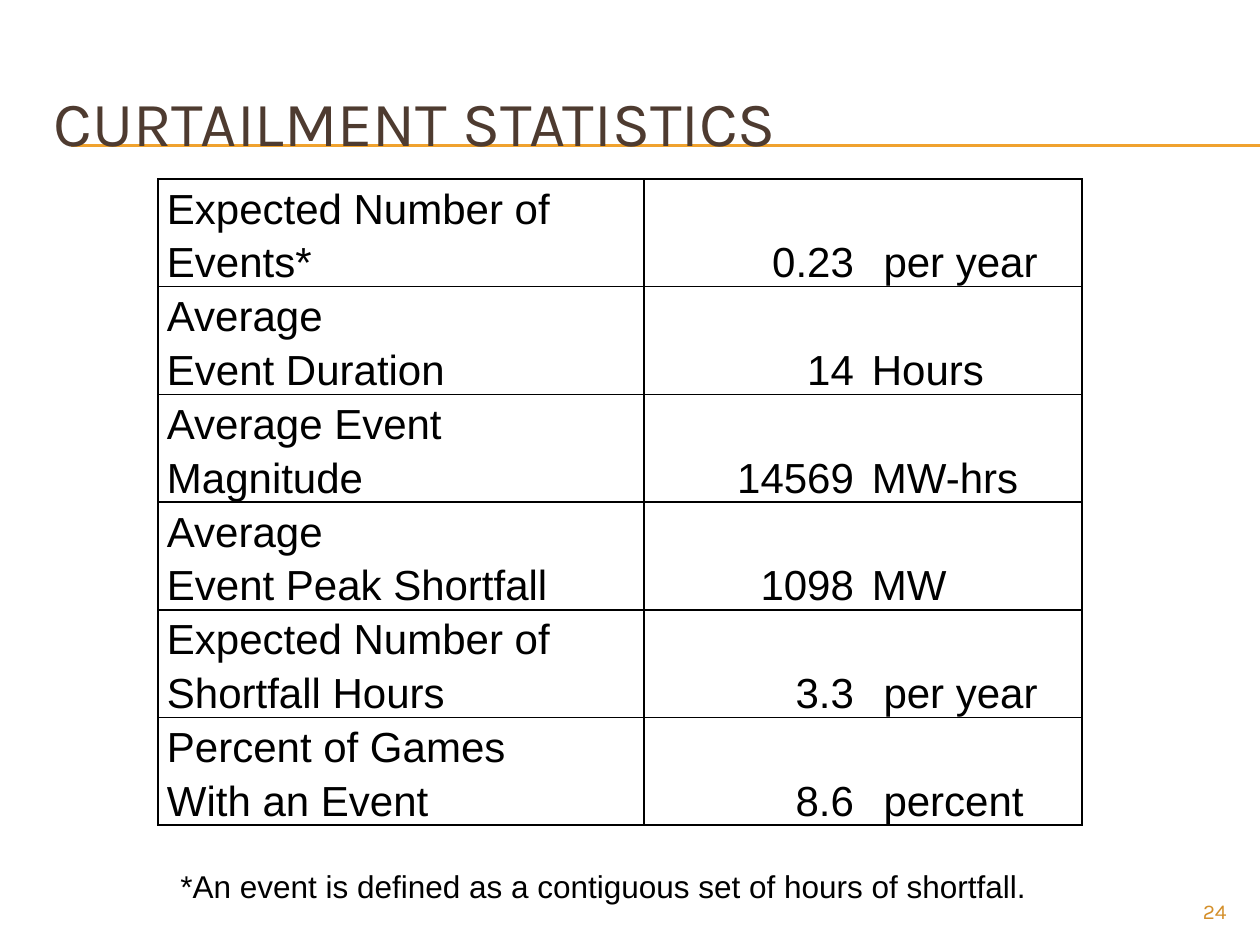
"""Build the curtailment statistics slide."""
from lxml.etree import SubElement
from pptx import Presentation
from pptx.dml.color import RGBColor
from pptx.enum.shapes import MSO_CONNECTOR
from pptx.enum.text import MSO_ANCHOR, PP_ALIGN
from pptx.oxml.ns import qn
from pptx.util import Pt

PX = 914400 // 126
COLORS = {"title": "4E3B30", "rule": "F0A22E", "number": "D48F29", "text": "000000", "cell": "FFFFFF"}
STYLES = {
    "title": {"size": Pt(36), "name": "Karla", "color": "title"},
    "number": {"size": Pt(12), "name": "Karla", "color": "number"},
    "table": {"size": Pt(24), "name": "Arial", "color": "text"},
    "note": {"size": Pt(18), "name": "Arial", "color": "text"},
}
ROWS = [
    (["Expected Number of Events*"], "0.23", " per year"),
    (["Average", "Event Duration"], "14", "Hours"),
    (["Average Event Magnitude"], "14569", "MW-hrs"),
    (["Average", "Event Peak Shortfall"], "1098", "MW"),
    (["Expected Number of", "Shortfall Hours"], "3.3", " per year"),
    (["Percent of Games", "With an Event"], "8.6", " percent"),
]


def write(tf, lines, style, align=PP_ALIGN.LEFT, spacing=None):
    tf.word_wrap = True
    for i, line in enumerate(lines):
        p = tf.add_paragraph() if i else tf.paragraphs[0]
        p.alignment = align
        p.line_spacing = spacing
        p.space_before = p.space_after = Pt(0)
        r = p.add_run()
        r.text = line
        for key, value in STYLES[style].items():
            if key == "color":
                r.font.color.rgb = RGBColor.from_string(COLORS[value])
            else:
                setattr(r.font, key, value)


def set_borders(cell, hidden):
    tc_pr = cell._tc.get_or_add_tcPr()
    for side in "LRTB":
        ln = SubElement(tc_pr, qn(f"a:ln{side}"), w=str(Pt(1)))
        if side == hidden:
            SubElement(ln, qn("a:noFill"))
        else:
            fill = SubElement(ln, qn("a:solidFill"))
            SubElement(fill, qn("a:srgbClr"), val=COLORS["text"])


prs = Presentation()
prs.slide_width, prs.slide_height = 1260 * PX, 945 * PX
s = prs.slides.add_slide(prs.slide_layouts[5])

title = s.shapes.title
title.left, title.top, title.width, title.height = [v * PX for v in (41, 63, 1197, 116)]
title.text_frame.vertical_anchor = MSO_ANCHOR.MIDDLE
write(title.text_frame, ["CURTAILMENT STATISTICS"], "title")

for y in (145, 146):
    rule = s.shapes.add_connector(MSO_CONNECTOR.STRAIGHT, 71 * PX, y * PX, 1260 * PX, y * PX)
    rule.line.color.rgb = RGBColor.from_string(COLORS["rule"])
    rule.line.width = Pt(0.75)
    SubElement(rule.element.spPr, qn("a:effectLst"))
    title.element.addprevious(rule.element)

number = s.shapes.add_textbox(1134 * PX, 892 * PX, 105 * PX, 34 * PX)
write(number.text_frame, ["24"], "number", PP_ALIGN.RIGHT)

table = s.shapes.add_table(len(ROWS), 3, 158 * PX, 179 * PX, 924 * PX, 630 * PX).table
table.first_row = table.horz_banding = False
for column, width in zip(table.columns, (486, 219, 219)):
    column.width = width * PX
cell_format = {
    "vertical_anchor": MSO_ANCHOR.BOTTOM,
    "margin_left": 9 * PX, "margin_right": 9 * PX, "margin_top": 0, "margin_bottom": 0,
}
for row, (label, value, unit) in enumerate(ROWS):
    table.rows[row].height = 105 * PX
    for col, lines in enumerate((label, [value], [unit])):
        cell = table.cell(row, col)
        for key, setting in cell_format.items():
            setattr(cell, key, setting)
        set_borders(cell, ("", "R", "L")[col])
        cell.fill.solid()
        cell.fill.fore_color.rgb = RGBColor.from_string(COLORS["cell"])
        write(cell.text_frame, lines, "table", PP_ALIGN.RIGHT if col == 1 else PP_ALIGN.LEFT, Pt(30.75))

note = s.shapes.add_textbox(168 * PX, 861 * PX, 914 * PX, 50 * PX)
write(note.text_frame, ["*An event is defined as a contiguous set of hours of shortfall."], "note")

prs.save("out.pptx")
